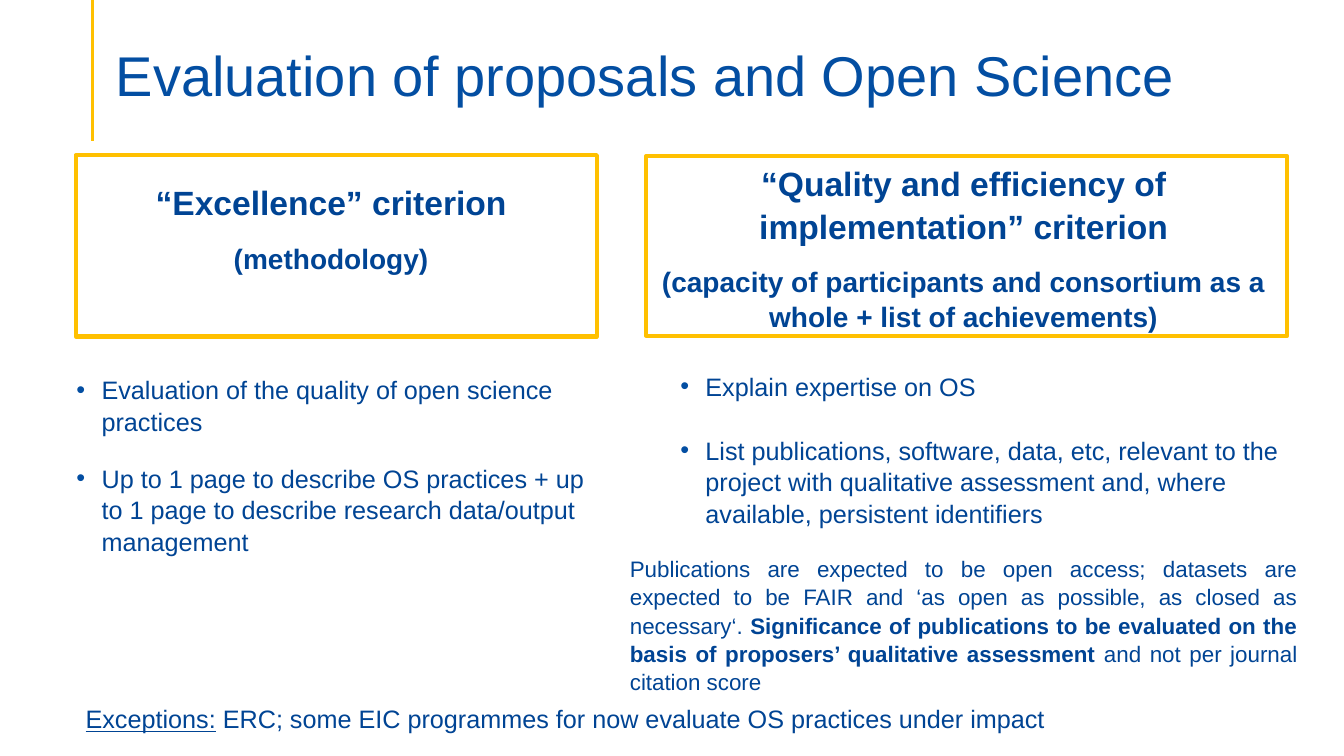
from dataclasses import dataclass

from lxml import etree
from pptx import Presentation
from pptx.dml.color import RGBColor
from pptx.enum.shapes import MSO_CONNECTOR, MSO_SHAPE
from pptx.enum.text import MSO_ANCHOR, PP_ALIGN
from pptx.oxml.ns import qn
from pptx.util import Inches, Pt

WIDTH, HEIGHT = Inches(13.333), Inches(7.5)


@dataclass(frozen=True)
class Theme:
    font: str = "Arial"
    title_blue: RGBColor = RGBColor(0x03, 0x4E, 0xA2)
    text_blue: RGBColor = RGBColor(0x00, 0x44, 0x94)
    gold: RGBColor = RGBColor(0xFF, 0xC0, 0x00)
    title: int = 40
    heading: int = 24
    subheading: int = 20
    body: int = 18
    note: int = 16


THEME = Theme()


def place(x, y, w, h):
    """Turn percentages of the slide into left, top, width, height."""
    return (int(WIDTH * x / 100), int(HEIGHT * y / 100),
            int(WIDTH * w / 100), int(HEIGHT * h / 100))


def add_accent_line(slide, x, length):
    left, top, _, height = place(x, 0, 0, length)
    line = slide.shapes.add_connector(MSO_CONNECTOR.STRAIGHT, left, top, left, height)
    line.line.color.rgb = THEME.gold
    line.line.width = Pt(2.25)
    etree.SubElement(line._element.spPr, qn("a:effectLst"))


def add_frame(slide, *share):
    sp = slide.shapes.add_shape(MSO_SHAPE.RECTANGLE, *place(*share))
    sp.shadow.inherit = False
    sp.fill.background()
    sp.line.color.rgb = THEME.gold
    sp.line.width = Pt(3)


def add_text_box(slide, *share):
    tf = slide.shapes.add_textbox(*place(*share)).text_frame
    tf.word_wrap = True
    return tf


def add_paragraph(tf, *texts, size, align=PP_ALIGN.LEFT, before=0, after=0,
                  spacing=1.05, color=THEME.text_blue, bold=False):
    """Add one paragraph; each text becomes a run of its own."""
    p = tf.paragraphs[0]
    if p.runs:
        p = tf.add_paragraph()
    p.alignment, p.line_spacing = align, spacing
    p.space_before, p.space_after = Pt(before), Pt(after)
    for text in texts:
        r = p.add_run()
        r.text = text
        r.font.name, r.font.size = THEME.font, Pt(size)
        r.font.bold, r.font.color.rgb = bold, color
    return p


def add_headings(tf, heading, subheading):
    for text, size in ((heading, THEME.heading), (subheading, THEME.subheading)):
        add_paragraph(tf, text, size=size, align=PP_ALIGN.CENTER, after=12, bold=True)


def add_bullets(tf, items, indent, first_gap, gap=0):
    for i, item in enumerate(items):
        p = add_paragraph(tf, item, size=THEME.body, after=18,
                          before=gap if i else first_gap)
        pPr = p._p.get_or_add_pPr()
        pPr.set("marL", str(Inches(indent)))
        pPr.set("indent", str(Inches(-0.25)))
        color = etree.SubElement(pPr, qn("a:buClr"))
        etree.SubElement(color, qn("a:srgbClr"), val=str(THEME.title_blue))
        etree.SubElement(pPr, qn("a:buFont"), typeface=THEME.font)
        etree.SubElement(pPr, qn("a:buChar"), char="•")


def add_title(slide, text):
    tf = add_text_box(slide, 7.88, 2.93, 86.25, 11.47)
    tf.vertical_anchor = MSO_ANCHOR.BOTTOM
    tf.margin_bottom = 0
    add_paragraph(tf, text, size=THEME.title, spacing=0.9, color=THEME.title_blue)


def main():
    prs = Presentation()
    prs.slide_width, prs.slide_height = WIDTH, HEIGHT
    slide = prs.slides.add_slide(prs.slide_layouts[6])

    # Title with accent line
    add_accent_line(slide, 6.9, 18.67)
    add_title(slide, "Evaluation of proposals and Open Science")

    # Excellence criterion
    add_frame(slide, 5.63, 20.53, 38.78, 24)
    tf = add_text_box(slide, 4.95, 23.2, 39.38, 56.93)
    add_headings(tf, "“Excellence” criterion", "(methodology)")
    add_bullets(tf, [
        "Evaluation of the quality of open science practices",
        "Up to 1 page to describe OS practices + up to 1 page to describe "
        "research data/output management",
    ], indent=0.25, first_gap=58)

    # Quality and efficiency criterion
    add_frame(slide, 48.08, 20.67, 47.7, 23.73)
    tf = add_text_box(slide, 46.13, 20.67, 51.15, 86.4)
    add_headings(tf, "“Quality and efficiency of implementation” criterion",
                 "(capacity of participants and consortium as a whole + list of achievements)")
    add_bullets(tf, [
        "Explain expertise on OS",
        "List publications, software, data, etc, relevant to the project with "
        "qualitative assessment and, where available, persistent identifiers",
    ], indent=0.75, first_gap=14, gap=5)
    p = add_paragraph(
        tf,
        "Publications are expected to be open access; datasets are expected to be "
        "FAIR and ‘as open as possible, as closed as necessary‘. ",
        "Significance of publications to be evaluated on the basis of proposers’ "
        "qualitative assessment ",
        "and not per journal citation score",
        size=THEME.note, align=PP_ALIGN.JUSTIFY, after=18)
    p.runs[1].font.bold = True

    # Exceptions
    tf = add_text_box(slide, 5.63, 92.4, 76.95, 5.33)
    p = add_paragraph(tf, "Exceptions:",
                      " ERC; some EIC programmes for now evaluate OS practices under impact",
                      size=THEME.body, spacing=1.0)
    p.runs[0].font.underline = True

    prs.save("out.pptx")


if __name__ == "__main__":
    main()
